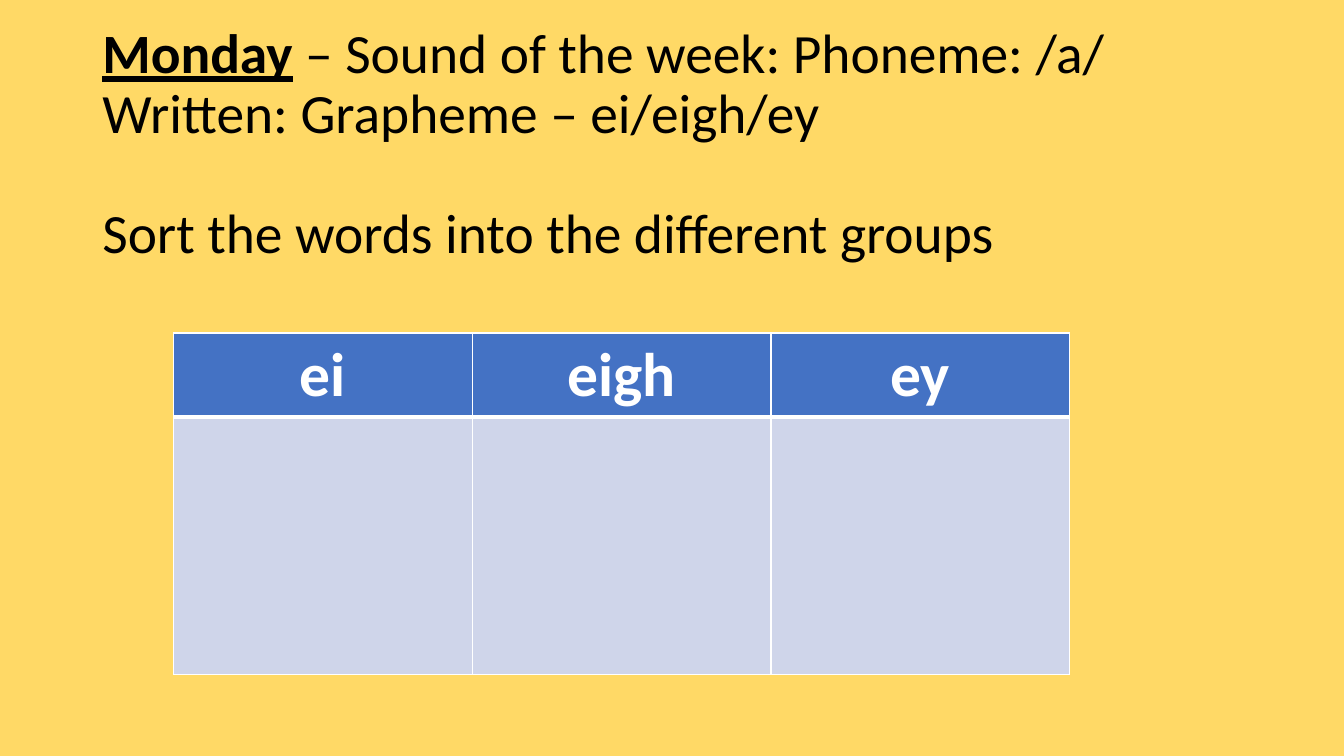
from lxml.etree import SubElement
from pptx import Presentation
from pptx.dml.color import RGBColor
from pptx.enum.text import MSO_ANCHOR as Anchor, PP_ALIGN as Align
from pptx.oxml.ns import qn
from pptx.util import Cm, Pt

COLORS = {
    "background": "FFD966",
    "text": "000000",
    "header": "4472C4",
    "body": "CFD5EA",
    "white": "FFFFFF",
}
GRAPHEMES = ["ei", "eigh", "ey"]


class SlideBuilder:
    font_name = "Calibri"

    def __init__(self, presentation):
        self.slide = presentation.slides.add_slide(presentation.slide_layouts[6])

    def color(self, name):
        return RGBColor.from_string(COLORS[name])

    def background(self, name):
        fill = self.slide.background.fill
        fill.solid()
        fill.fore_color.rgb = self.color(name)

    def style(self, paragraph, size, color, bold=None):
        font = paragraph.font
        font.name, font.size, font.bold = self.font_name, Pt(size), bold
        font.color.rgb = self.color(color)

    def heading(self, left, top, width, height, lines, size):
        """Each line is (space before in points, emphasised start, plain rest)."""
        box = self.slide.shapes.add_textbox(Cm(left), Cm(top), Cm(width), Cm(height))
        frame = box.text_frame
        frame.word_wrap = True
        frame.vertical_anchor = Anchor.MIDDLE
        for index, (space, emphasis, rest) in enumerate(lines):
            paragraph = frame.add_paragraph() if index else frame.paragraphs[0]
            paragraph.line_spacing = 0.9
            paragraph.space_before = Pt(space)
            self.style(paragraph, size, "text")
            if emphasis:
                run = paragraph.add_run()
                run.text = emphasis
                run.font.bold = run.font.underline = True
            paragraph.add_run().text = rest

    def borders(self, cell, widths):
        properties = cell._tc.get_or_add_tcPr()
        for side, width in zip("LRTB", widths):
            line = SubElement(properties, qn(f"a:ln{side}"), w=str(Pt(width)))
            fill = SubElement(line, qn("a:solidFill"))
            SubElement(fill, qn("a:srgbClr"), val=COLORS["white"])

    def sorting_table(self, left, top, column_width, row_heights, headings, size):
        columns = len(headings)
        table = self.slide.shapes.add_table(
            len(row_heights), columns, Cm(left), Cm(top),
            Cm(column_width * columns), Cm(sum(row_heights))).table
        for column in table.columns:
            column.width = Cm(column_width)
        for index, (row, height) in enumerate(zip(table.rows, row_heights)):
            row.height = Cm(height)
            is_header = index == 0
            for cell, heading in zip(row.cells, headings):
                self.borders(cell, (1, 1, 1, 3) if is_header else (1, 1, 3, 1))
                cell.fill.solid()
                cell.fill.fore_color.rgb = self.color("header" if is_header else "body")
                if is_header:
                    cell.text = heading
                    paragraph = cell.text_frame.paragraphs[0]
                    paragraph.alignment = Align.CENTER
                    self.style(paragraph, size, "white", bold=True)


def main():
    presentation = Presentation()
    presentation.slide_width, presentation.slide_height = Cm(33.87), Cm(19.05)
    builder = SlideBuilder(presentation)
    builder.background("background")
    builder.heading(2.33, 1.83, 29.21, 3.68, [
        (0, "Monday", " – Sound of the week: Phoneme: /a/"),
        (0, "", "Written: Grapheme – ei/eigh/ey"),
        (43, "", "Sort the words into the different groups"),
    ], size=39.6)
    builder.sorting_table(4.37, 8.39, 7.53, [2.12, 6.48], GRAPHEMES, size=44)
    presentation.save("out.pptx")


if __name__ == "__main__":
    main()
